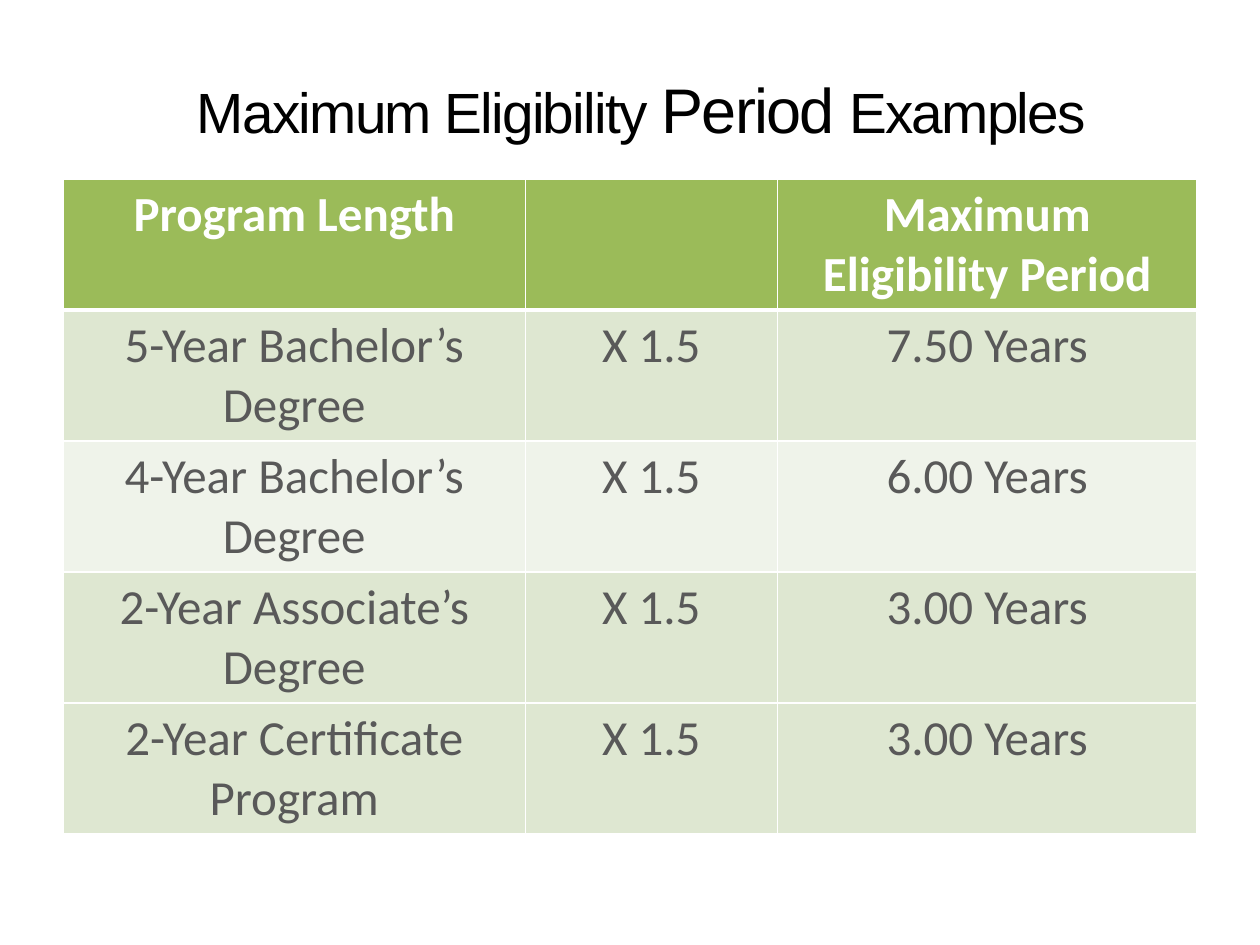
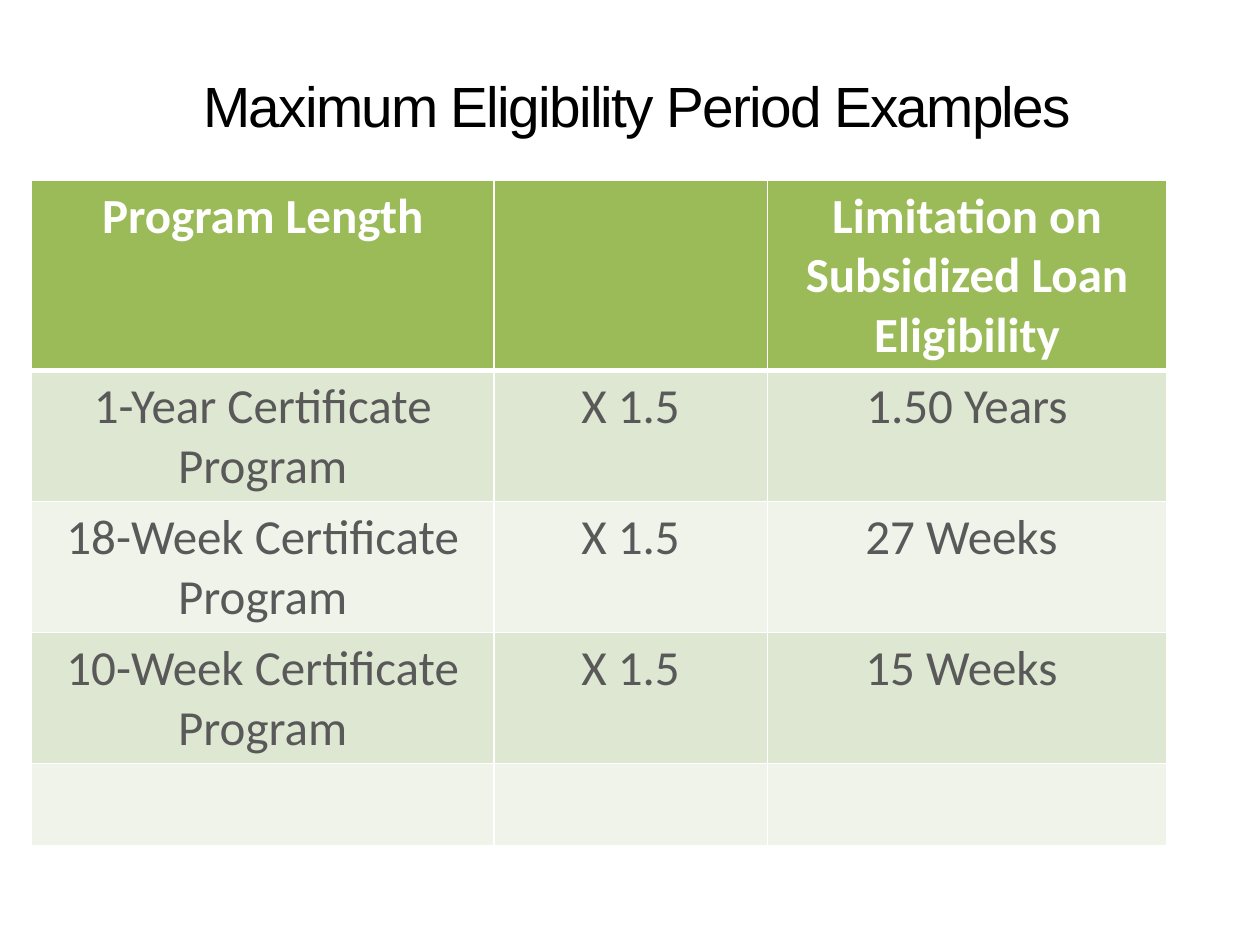
"""Build two slides of maximum eligibility period examples."""
from lxml.etree import SubElement
from pptx import Presentation
from pptx.dml.color import RGBColor
from pptx.enum.text import MSO_ANCHOR as Anchor, PP_ALIGN as Align
from pptx.oxml.ns import qn
from pptx.util import Inches, Pt

COLORS = {"title": "000000", "header": "9BBB59", "header_text": "FFFFFF",
          "dark_band": "DEE7D1", "light_band": "EFF3EA",
          "body_text": "595959", "border": "FFFFFF"}
TITLE_SIZE = 32.4
TITLE_TOP, TITLE_HEIGHT = 0.45, 0.71
LINE_HEIGHT, CELL_PADDING, EMPTY_ROW = 0.47, 0.1, 0.65
FACTOR = "X 1.5"

SLIDES = [
    {
        "title": [("Maximum Eligibility ", TITLE_SIZE), ("Period", 36),
                  (" Examples", TITLE_SIZE)],
        "title_left": 0.33, "title_width": 9.52,
        "table_left": 0.5, "table_top": 1.42,
        "columns": [3.67, 2, 3.33],
        "lines": [2, 2, 2, 2, 2],
        "bands": ["header", "dark_band", "light_band", "dark_band", "dark_band"],
        "rows": [
            ("Program Length", "", "Maximum Eligibility Period"),
            ("5-Year Bachelor’s Degree", FACTOR, "7.50 Years"),
            ("4-Year Bachelor’s Degree", FACTOR, "6.00 Years"),
            ("2-Year Associate’s Degree", FACTOR, "3.00 Years"),
            ("2-Year Certificate Program", FACTOR, "3.00 Years"),
        ],
    },
    {
        "title": [("Maximum Eligibility Period Examples", TITLE_SIZE)],
        "title_left": 0.25, "title_width": 9.61,
        "table_left": 0.25, "table_top": 1.43,
        "columns": [3.67, 2.17, 3.17],
        "lines": [3, 2, 2, 2, 0],
        "bands": ["header", "dark_band", "light_band", "dark_band", "light_band"],
        "rows": [
            ("Program Length", "", "Limitation on Subsidized Loan Eligibility"),
            ("1-Year Certificate Program", FACTOR, "1.50 Years"),
            ("18-Week Certificate Program", FACTOR, "27 Weeks "),
            ("10-Week Certificate Program", FACTOR, "15 Weeks "),
            ("", "", ""),
        ],
    },
]


def rgb(name):
    return RGBColor.from_string(COLORS[name])


def add_text(para, text, *, size, font, color, bold=False, spacing=0):
    para.alignment = Align.CENTER
    span = para.add_run()
    span.text = text
    span.font.size, span.font.name, span.font.bold = Pt(size), font, bold
    span.font.color.rgb = rgb(color)
    if spacing:
        span.font._element.set("spc", str(spacing * 100))


def add_title(page, content):
    box = page.shapes.add_textbox(
        Inches(content["title_left"]), Inches(TITLE_TOP),
        Inches(content["title_width"]), Inches(TITLE_HEIGHT))
    frame = box.text_frame
    frame.word_wrap = True
    frame.vertical_anchor = Anchor.TOP
    frame.margin_top = Inches(0.11)
    for text, size in content["title"]:
        add_text(frame.paragraphs[0], text, size=size, font="Arial",
                 color="title", spacing=-1)


def set_borders(cell, top, bottom):
    properties = cell._tc.get_or_add_tcPr()
    widths = {"a:lnL": 1, "a:lnR": 1, "a:lnT": top, "a:lnB": bottom}
    for index, (side, width) in enumerate(widths.items()):
        line = SubElement(properties, qn(side), w=str(Pt(width)))
        fill = SubElement(line, qn("a:solidFill"))
        SubElement(fill, qn("a:srgbClr"), val=COLORS["border"])
        properties.insert(index, line)


def add_program_table(page, content):
    heights = [LINE_HEIGHT * count + CELL_PADDING if count else EMPTY_ROW
               for count in content["lines"]]
    table = page.shapes.add_table(
        len(heights), len(content["columns"]),
        Inches(content["table_left"]), Inches(content["table_top"]),
        Inches(sum(content["columns"])), Inches(sum(heights))).table
    for column, width in zip(table.columns, content["columns"]):
        column.width = Inches(width)
    for index, (row, texts) in enumerate(zip(table.rows, content["rows"])):
        row.height = Inches(heights[index])
        is_header = index == 0
        for cell, text in zip(row.cells, texts):
            cell.fill.solid()
            cell.fill.fore_color.rgb = rgb(content["bands"][index])
            set_borders(cell, top=3 if index == 1 else 1,
                        bottom=3 if is_header else 1)
            if text:
                add_text(cell.text_frame.paragraphs[0], text, size=28,
                         font="Calibri", bold=is_header,
                         color="header_text" if is_header else "body_text")


def main():
    deck = Presentation()
    deck.slide_width, deck.slide_height = Inches(10), Inches(7.5)
    for content in SLIDES:
        page = deck.slides.add_slide(deck.slide_layouts[6])
        add_title(page, content)
        add_program_table(page, content)
    deck.save("out.pptx")


if __name__ == "__main__":
    main()
